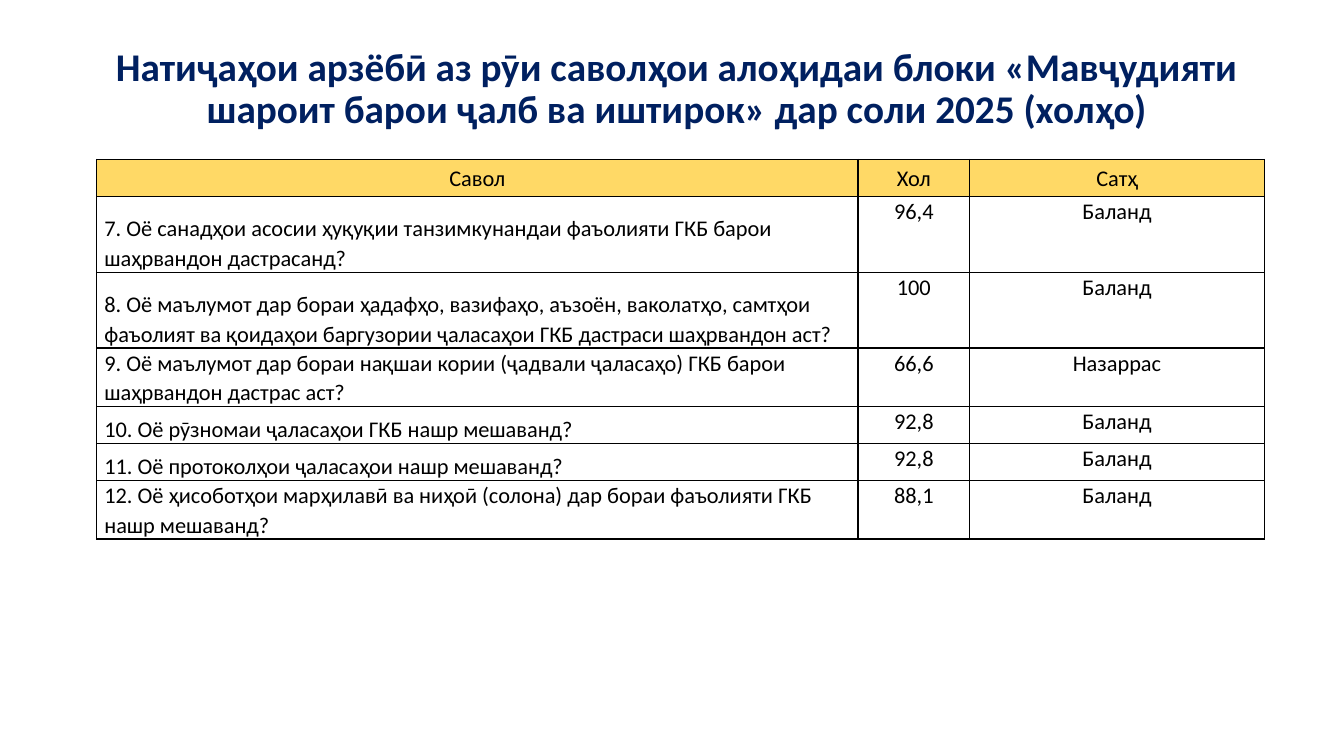
from dataclasses import dataclass

from lxml import etree
from pptx import Presentation
from pptx.dml.color import RGBColor
from pptx.enum.text import MSO_ANCHOR, MSO_AUTO_SIZE, PP_ALIGN
from pptx.oxml.ns import qn
from pptx.util import Cm, Pt

LEFT, CENTER = PP_ALIGN.LEFT, PP_ALIGN.CENTER
TOP, MIDDLE, BOTTOM = MSO_ANCHOR.TOP, MSO_ANCHOR.MIDDLE, MSO_ANCHOR.BOTTOM
NO_FIT = MSO_AUTO_SIZE.NONE
TITLE_ONLY = 5


@dataclass(frozen=True)
class Theme:
    font: str = "Calibri"
    navy: str = "002060"
    gold: str = "FFD966"
    black: str = "000000"
    title_size: int = 28
    body_size: int = 16
    rule: int = 1


class Deck:
    def __init__(self, theme):
        self.theme = theme
        self.file = Presentation()
        self.file.slide_width = Cm(33.87)
        self.file.slide_height = Cm(19.05)
        self.slide = None

    def add_slide(self):
        layout = self.file.slide_layouts[TITLE_ONLY]
        self.slide = self.file.slides.add_slide(layout)

    def style(self, para, size, color, align, bold=False):
        para.alignment = align
        para.font.name = self.theme.font
        para.font.size = Pt(size)
        para.font.bold = bold
        para.font.color.rgb = RGBColor.from_string(color)

    def title(self, text, left, top, width, height):
        shape = self.slide.shapes.title
        shape.left, shape.top = Cm(left), Cm(top)
        shape.width, shape.height = Cm(width), Cm(height)
        frame = shape.text_frame
        frame.text = text
        frame.word_wrap = True
        frame.auto_size = NO_FIT
        frame.vertical_anchor = MIDDLE
        para = frame.paragraphs[0]
        para.line_spacing = 0.9
        self.style(para, self.theme.title_size, self.theme.navy, CENTER, True)

    def border(self, cell):
        props = cell._tc.get_or_add_tcPr()
        for side in ("lnL", "lnR", "lnT", "lnB"):
            line = etree.SubElement(props, qn(f"a:{side}"), w=str(Pt(self.theme.rule)))
            fill = etree.SubElement(line, qn("a:solidFill"))
            etree.SubElement(fill, qn("a:srgbClr"), val=self.theme.black)

    def cell(self, cell, text, align, anchor, fill=None):
        cell.text = text
        cell.vertical_anchor = anchor
        cell.margin_left = cell.margin_right = Cm(0.19)
        cell.margin_top = cell.margin_bottom = 0
        para = cell.text_frame.paragraphs[0]
        para.line_spacing = 1.07
        para.space_after = Pt(8)
        self.style(para, self.theme.body_size, self.theme.black, align)
        self.border(cell)
        if fill:
            cell.fill.solid()
            cell.fill.fore_color.rgb = RGBColor.from_string(fill)
        else:
            cell.fill.background()

    def table(self, rows, left, top, widths, heights):
        frame = self.slide.shapes.add_table(
            len(rows), len(widths), Cm(left), Cm(top),
            Cm(sum(widths)), Cm(sum(heights)))
        table = frame.table
        table.horz_banding = False
        for col, width in zip(table.columns, widths):
            col.width = Cm(width)
        for row, height in zip(table.rows, heights):
            row.height = Cm(height)
        for r, texts in enumerate(rows):
            for c, text in enumerate(texts):
                cell = table.cell(r, c)
                if r == 0:
                    self.cell(cell, text, CENTER, MIDDLE, self.theme.gold)
                elif c == 0:
                    self.cell(cell, text, LEFT, BOTTOM)
                else:
                    self.cell(cell, text, CENTER, TOP)


# Survey results
HIGH = "Баланд"
ROWS = [
    ("Савол", "Хол", "Сатҳ"),
    ("7. Оё санадҳои асосии ҳуқуқии танзимкунандаи фаъолияти ГКБ барои "
     "шаҳрвандон дастрасанд?", "96,4", HIGH),
    ("8. Оё маълумот дар бораи ҳадафҳо, вазифаҳо, аъзоён, ваколатҳо, самтҳои "
     "фаъолият ва қоидаҳои баргузории ҷаласаҳои ГКБ дастраси шаҳрвандон аст?",
     "100", HIGH),
    ("9. Оё маълумот дар бораи нақшаи кории (ҷадвали ҷаласаҳо) ГКБ барои "
     "шаҳрвандон дастрас аст?", "66,6", "Назаррас"),
    ("10. Оё рӯзномаи ҷаласаҳои ГКБ нашр мешаванд?", "92,8", HIGH),
    ("11. Оё протоколҳои ҷаласаҳои нашр мешаванд?", "92,8", HIGH),
    ("12. Оё ҳисоботҳои марҳилавӣ ва ниҳоӣ (солона) дар бораи фаъолияти ГКБ "
     "нашр мешаванд?", "88,1", HIGH),
]

# Row heights: one line, two lines, two lines with room above
ONE, TWO, TALL = 0.93, 1.46, 1.91


def main():
    deck = Deck(Theme())
    deck.add_slide()

    # Heading
    deck.title("Натиҷаҳои арзёбӣ аз рӯи саволҳои алоҳидаи блоки «Мавҷудияти "
               "шароит барои ҷалб ва иштирок» дар соли 2025 (холҳо)",
               2.44, 0.97, 29.21, 2.57)

    # Scores by question
    deck.table(ROWS, 2.44, 4.02, (19.18, 2.82, 7.42),
               (ONE, TALL, TALL, TWO, ONE, ONE, TWO))

    deck.file.save("out.pptx")


if __name__ == "__main__":
    main()
